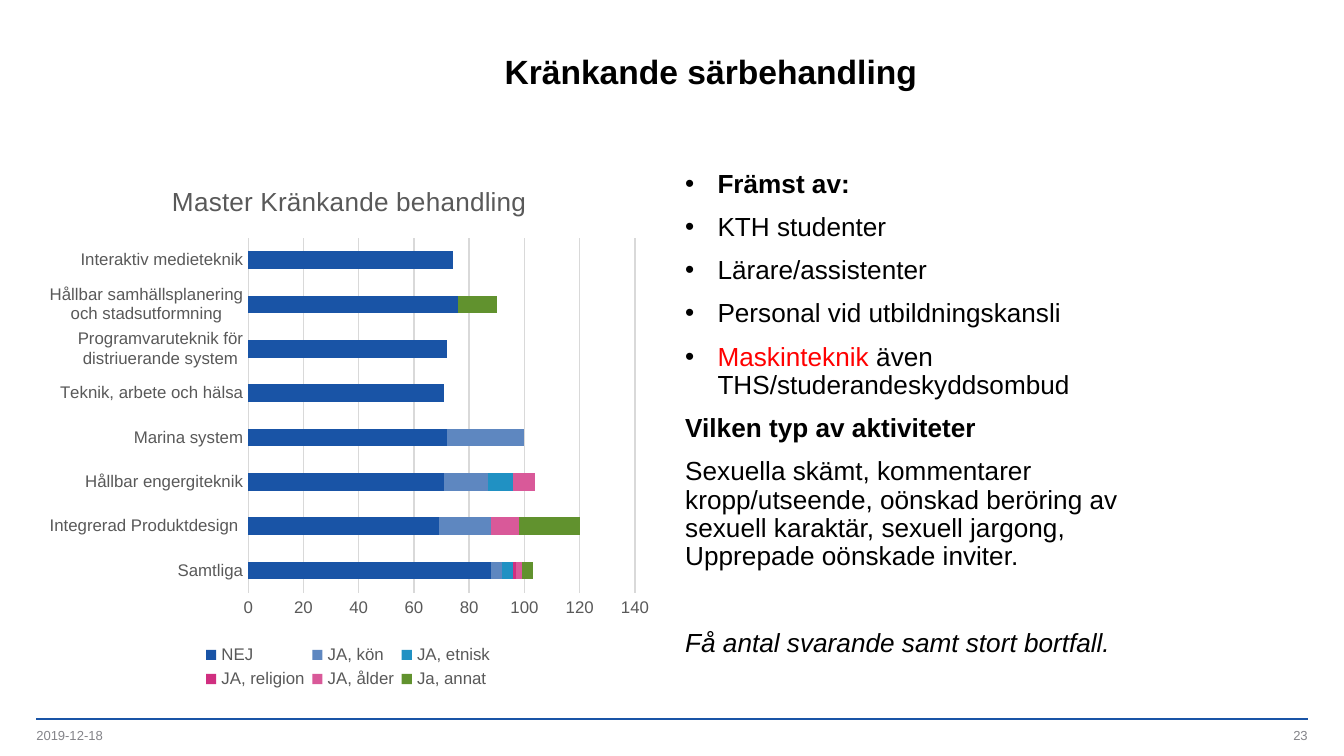
from lxml.etree import SubElement
from pptx import Presentation
from pptx.chart.data import CategoryChartData
from pptx.dml.color import RGBColor
from pptx.enum.chart import XL_CHART_TYPE, XL_LEGEND_POSITION, XL_TICK_MARK
from pptx.enum.shapes import MSO_CONNECTOR
from pptx.enum.text import MSO_ANCHOR, PP_ALIGN
from pptx.oxml.ns import qn
from pptx.util import Inches, Pt

WIDTH = 10
HEIGHT = WIDTH * 9 / 16
MARGIN = 0.27
CONTENT_TOP, CONTENT_HEIGHT = 1.22, 3.94
FONT = "Arial"
BLACK, RED, BLUE = "000000", "FF0000", "1954A6"
FOOTER_GREY, CHART_GREY, GRID_GREY = "848489", "595959", "D9D9D9"

PROGRAMMES = [
    "Samtliga", "Integrerad Produktdesign ", "Hållbar engergiteknik",
    "Marina system", "Teknik, arbete och hälsa",
    "Programvaruteknik för distriuerande system",
    "Hållbar samhällsplanering och stadsutformning", "Interaktiv medieteknik",
]
ANSWERS = [
    ("NEJ", BLUE, (88, 69, 71, 72, 71, 72, 76, 74)),
    ("JA, kön", "5E87C0", (4, 19, 16, 28, 0, 0, 0, 0)),
    ("JA, etnisk", "2091C3", (4, 0, 9, 0, 0, 0, 0, 0)),
    ("JA, religion", "D02F80", (1, 0, 0, 0, 0, 0, 0, 0)),
    ("JA, ålder", "D95999", (2, 10, 8, 0, 0, 0, 0, 0)),
    ("Ja, annat", "61922E", (4, 22, 0, 0, 0, 0, 14, 0)),
]
SOURCES = [
    [("Främst av:", {"bold": True})],
    [("KTH studenter", {})],
    [("Lärare/assistenter", {})],
    [("Personal vid utbildningskansli", {})],
    [("Maskinteknik ", {"color": RED}), ("även THS/studerandeskyddsombud", {})],
]
ACTIVITIES = [
    ("Vilken typ av aktiviteter", {"bold": True}, 6),
    ("Sexuella skämt, kommentarer kropp/utseende, oönskad beröring av "
     "sexuell karaktär, sexuell jargong, Upprepade oönskade inviter.", {}, 6),
    ("Få antal svarande samt stort bortfall.", {"italic": True}, 29.5),
]


def rgb(color):
    return RGBColor.from_string(color)


def style_font(font, size, color=BLACK, bold=False, italic=False):
    font.name, font.size = FONT, Pt(size)
    font.bold, font.italic = bold, italic
    font.color.rgb = rgb(color)


def add_run(paragraph, text, size, **style):
    run = paragraph.add_run()
    run.text = text
    style_font(run.font, size, **style)


def add_frame(slide, left, top, width, height, anchor=MSO_ANCHOR.TOP):
    box = slide.shapes.add_textbox(*map(Inches, (left, top, width, height)))
    frame = box.text_frame
    frame.word_wrap = True
    frame.vertical_anchor = anchor
    return frame


def add_title(slide, text):
    frame = add_frame(slide, 1.16, 0.28, 8.26, 0.38, MSO_ANCHOR.MIDDLE)
    heading = frame.paragraphs[0]
    heading.alignment = PP_ALIGN.CENTER
    heading.line_spacing = Pt(30)
    add_run(heading, text, 18, bold=True)


def add_footer_text(slide, left, text, alignment):
    frame = add_frame(slide, left, 5.41, 2.25, 0.13, MSO_ANCHOR.MIDDLE)
    frame.margin_left = frame.margin_right = 0
    frame.margin_top = frame.margin_bottom = 0
    frame.word_wrap = False
    frame.paragraphs[0].alignment = alignment
    add_run(frame.paragraphs[0], text, 7, color=FOOTER_GREY)


def add_footer(slide):
    ends = (MARGIN, 5.35, WIDTH - MARGIN, 5.35)
    rule = slide.shapes.add_connector(MSO_CONNECTOR.STRAIGHT, *map(Inches, ends))
    rule.line.color.rgb = rgb(BLUE)
    rule.line.width = Pt(1)
    SubElement(rule._element.spPr, qn("a:effectLst"))
    add_footer_text(slide, MARGIN, "2019-12-18", PP_ALIGN.LEFT)
    add_footer_text(slide, WIDTH - MARGIN - 2.25, "23", PP_ALIGN.RIGHT)


def place(part, index, inner=False, **shares):
    """Fix a chart part at shares of the chart's size."""
    for old in part.findall(qn("c:layout")):
        part.remove(old)
    layout = SubElement(part, qn("c:layout"))
    part.insert(index, layout)
    manual = SubElement(layout, qn("c:manualLayout"))
    if inner:
        SubElement(manual, qn("c:layoutTarget"), val="inner")
    for side in ("x", "y"):
        SubElement(manual, qn(f"c:{side}Mode"), val="edge")
    for key, share in shares.items():
        SubElement(manual, qn(f"c:{key}"), val=str(share))


def style_axes(chart):
    for axis in (chart.category_axis, chart.value_axis):
        axis.major_tick_mark = axis.minor_tick_mark = XL_TICK_MARK.NONE
        style_font(axis.tick_labels.font, 9, CHART_GREY)
    values = chart.value_axis
    values.minimum_scale, values.maximum_scale, values.major_unit = 0, 140, 20
    values.has_major_gridlines = True
    values.format.line.fill.background()
    chart.category_axis.has_major_gridlines = False
    for line in (chart.category_axis.format.line, values.major_gridlines.format.line):
        line.color.rgb = rgb(GRID_GREY)
        line.width = Pt(0.75)


def add_answer_chart(slide):
    data = CategoryChartData(number_format="General")
    data.categories = PROGRAMMES
    for name, _, counts in ANSWERS:
        data.add_series(name, counts)
    area = map(Inches, (MARGIN, CONTENT_TOP, 4.64, CONTENT_HEIGHT))
    chart = slide.shapes.add_chart(XL_CHART_TYPE.BAR_STACKED, *area, data).chart
    style_font(chart.font, 10)

    bars = chart.plots[0]
    bars.gap_width, bars.overlap, bars.vary_by_categories = 150, 100, False
    for series, (_, color, _) in zip(bars.series, ANSWERS):
        series.format.fill.solid()
        series.format.fill.fore_color.rgb = rgb(color)
    style_axes(chart)

    chart.has_title = True
    heading = chart.chart_title.text_frame.paragraphs[0]
    add_run(heading, "Master Kränkande behandling", 14, color=CHART_GREY)
    chart.has_legend = True
    chart.legend.position = XL_LEGEND_POSITION.BOTTOM
    chart.legend.include_in_layout = False
    style_font(chart.legend.font, 9, CHART_GREY)

    place(chart.chart_title._element, 1, x=0.21, y=0.03)
    place(chart.legend._element, 1, x=0.26, y=0.9, w=0.48, h=0.1)
    plot_area = chart._chartSpace.chart.plotArea
    place(plot_area, 0, inner=True, x=0.34, y=0.14, w=0.62, h=0.67)


def add_bullet(paragraph):
    properties = paragraph._p.get_or_add_pPr()
    properties.set("marL", str(Inches(0.24)))
    properties.set("indent", str(-Inches(0.24)))
    color = SubElement(properties, qn("a:buClr"))
    SubElement(color, qn("a:srgbClr"), val=BLACK)
    SubElement(properties, qn("a:buFont"), typeface=FONT)
    SubElement(properties, qn("a:buChar"), char="•")


def add_findings(slide):
    frame = add_frame(slide, WIDTH / 2, CONTENT_TOP, 3.75, CONTENT_HEIGHT)
    rows = [(runs, 6, True) for runs in SOURCES]
    rows += [([(text, style)], gap, False) for text, style, gap in ACTIVITIES]
    for number, (runs, gap, bulleted) in enumerate(rows):
        paragraph = frame.add_paragraph() if number else frame.paragraphs[0]
        if bulleted:
            add_bullet(paragraph)
        paragraph.line_spacing = 0.9
        paragraph.space_before = Pt(gap if number else 0)
        paragraph.space_after = Pt(2)
        for text, style in runs:
            add_run(paragraph, text, 14, **style)


def main():
    deck = Presentation()
    deck.slide_width, deck.slide_height = Inches(WIDTH), Inches(HEIGHT)
    slide = deck.slides.add_slide(deck.slide_layouts[6])
    add_footer(slide)
    add_title(slide, "Kränkande särbehandling")
    add_answer_chart(slide)
    add_findings(slide)
    deck.save("out.pptx")


if __name__ == "__main__":
    main()
